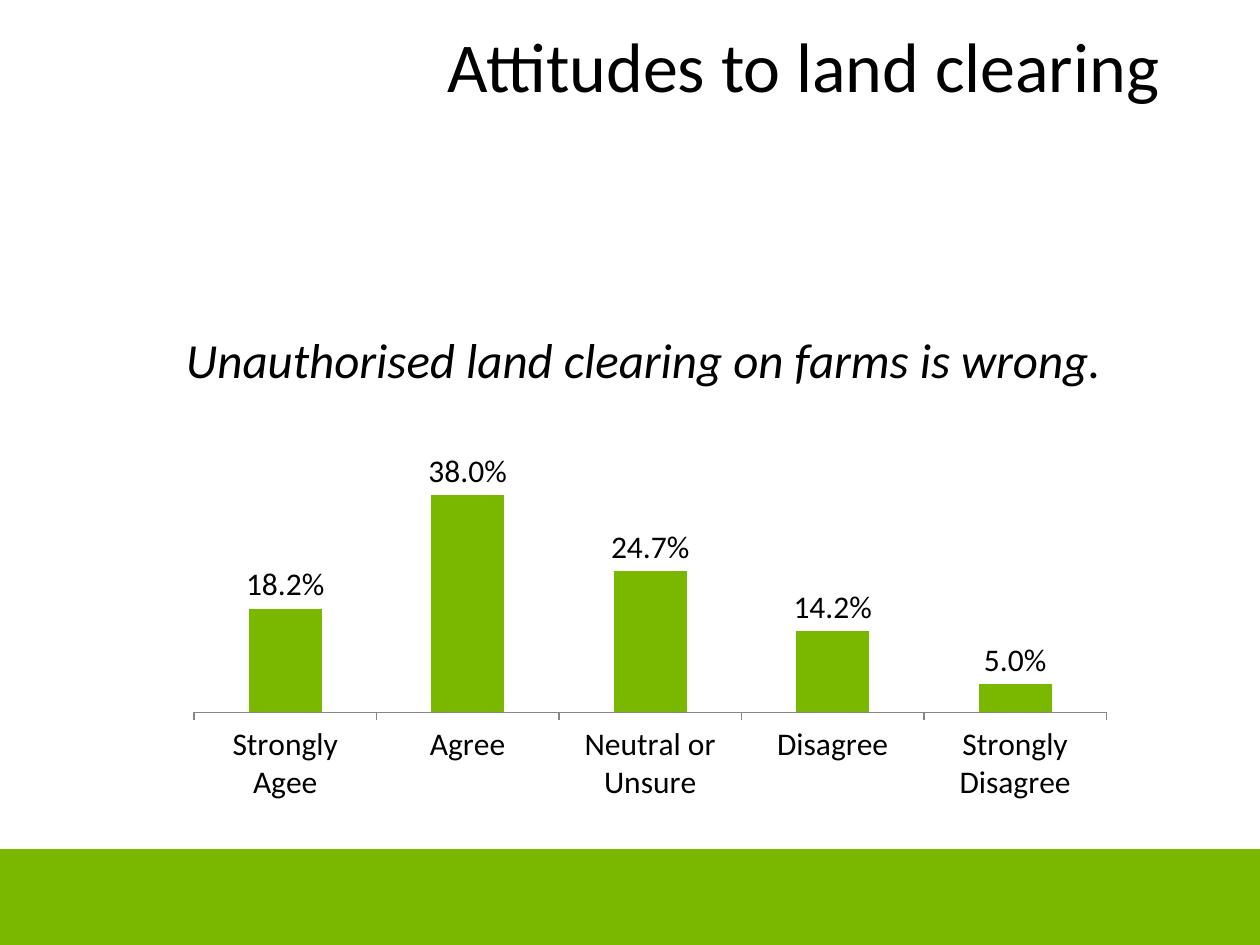
from lxml import etree
from pptx import Presentation
from pptx.chart.data import CategoryChartData
from pptx.dml.color import RGBColor
from pptx.enum.chart import XL_CHART_TYPE, XL_LABEL_POSITION, XL_TICK_MARK
from pptx.enum.shapes import MSO_SHAPE
from pptx.enum.text import MSO_AUTO_SIZE, PP_ALIGN
from pptx.oxml.ns import qn
from pptx.util import Cm, Pt

COLUMNS = XL_CHART_TYPE.COLUMN_CLUSTERED
OUTSIDE_END = XL_LABEL_POSITION.OUTSIDE_END
TICK_OUT = XL_TICK_MARK.OUTSIDE
RECTANGLE = MSO_SHAPE.RECTANGLE
FIT_SHAPE = MSO_AUTO_SIZE.SHAPE_TO_FIT_TEXT
CENTER, JUSTIFY = PP_ALIGN.CENTER, PP_ALIGN.JUSTIFY

FONT = "Calibri"
BLACK, GREEN, GREY = "000000", "7AB800", "868686"
PAGE_WIDTH, PAGE_HEIGHT, FOOTER_HEIGHT = 25.4, 19.05, 1.93
PERCENT = "0.0%"
ANSWERS = {
    "Strongly Agee": 0.182,
    "Agree": 0.38,
    "Neutral or Unsure": 0.247,
    "Disagree": 0.142,
    "Strongly Disagree": 0.05,
}


def color(hex_string):
    return RGBColor.from_string(hex_string)


def style_font(font, size):
    font.name = FONT
    font.size = Pt(size)
    font.color.rgb = color(BLACK)


def add_footer(page, box):
    footer = page.shapes.add_shape(RECTANGLE, *map(Cm, box))
    footer.shadow.inherit = False
    footer.fill.solid()
    footer.fill.fore_color.rgb = color(GREEN)
    footer.line.fill.background()


def add_text(page, box, text, size, alignment):
    frame = page.shapes.add_textbox(*map(Cm, box)).text_frame
    frame.word_wrap = True
    para = frame.paragraphs[0]
    para.text = text
    para.alignment = alignment
    style_font(para.runs[0].font, size)
    return frame


def add_statement(page, box):
    frame = add_text(page, box, "Unauthorised land clearing on farms is wrong.", 28, JUSTIFY)
    frame.auto_size = FIT_SHAPE
    para = frame.paragraphs[0]
    para.line_spacing = 2.0
    para.space_after = Pt(6)
    para.runs[0].font.italic = True


def place_plot(chart, x, y, w, h):
    """Fix the inner plot area, in fractions of the chart's size."""
    plot_area = chart.plots[0]._element.getparent()
    for old in plot_area.findall(qn("c:layout")):
        plot_area.remove(old)
    layout = etree.Element(qn("c:layout"))
    manual = etree.SubElement(layout, qn("c:manualLayout"))
    settings = {"layoutTarget": "inner", "xMode": "edge", "yMode": "edge",
                "x": x, "y": y, "w": w, "h": h}
    for name, value in settings.items():
        etree.SubElement(manual, qn(f"c:{name}")).set("val", str(value))
    plot_area.insert(0, layout)


def add_answer_chart(page, box):
    data = CategoryChartData(number_format=PERCENT)
    data.categories = ANSWERS.keys()
    data.add_series("Series 1", ANSWERS.values())
    chart = page.shapes.add_chart(COLUMNS, *map(Cm, box), data).chart
    chart.has_title = False
    chart.has_legend = False
    style_font(chart.font, 18)

    value_axis = chart.value_axis
    value_axis.visible = False
    value_axis.has_major_gridlines = False
    value_axis.minimum_scale, value_axis.maximum_scale = 0, 0.4
    value_axis.tick_labels.number_format = PERCENT
    value_axis.tick_labels.number_format_is_linked = False
    chart.category_axis.major_tick_mark = TICK_OUT
    chart.category_axis.format.line.color.rgb = color(GREY)

    plot = chart.plots[0]
    plot.gap_width = 150
    plot.vary_by_categories = False
    series = plot.series[0]
    series.format.fill.solid()
    series.format.fill.fore_color.rgb = color(GREEN)
    labels = series.data_labels
    labels.show_value = True
    labels.number_format = PERCENT
    labels.number_format_is_linked = False
    labels.position = OUTSIDE_END
    style_font(labels.font, 18)
    place_plot(chart, 0.011, 0.124, 0.958, 0.562)


def main():
    deck = Presentation()
    deck.slide_width, deck.slide_height = Cm(PAGE_WIDTH), Cm(PAGE_HEIGHT)
    page = deck.slides.add_slide(deck.slide_layouts[6])
    add_footer(page, (0, PAGE_HEIGHT - FOOTER_HEIGHT, PAGE_WIDTH, FOOTER_HEIGHT))
    add_statement(page, (3.5, 5.33, 19.2, 2.64))
    add_answer_chart(page, (3.7, 8.74, 19.2, 8.2))
    add_text(page, (7.5, 0.33, 17.4, 3.18), "Attitudes to land clearing", 40, CENTER)
    deck.save("out.pptx")


if __name__ == "__main__":
    main()
